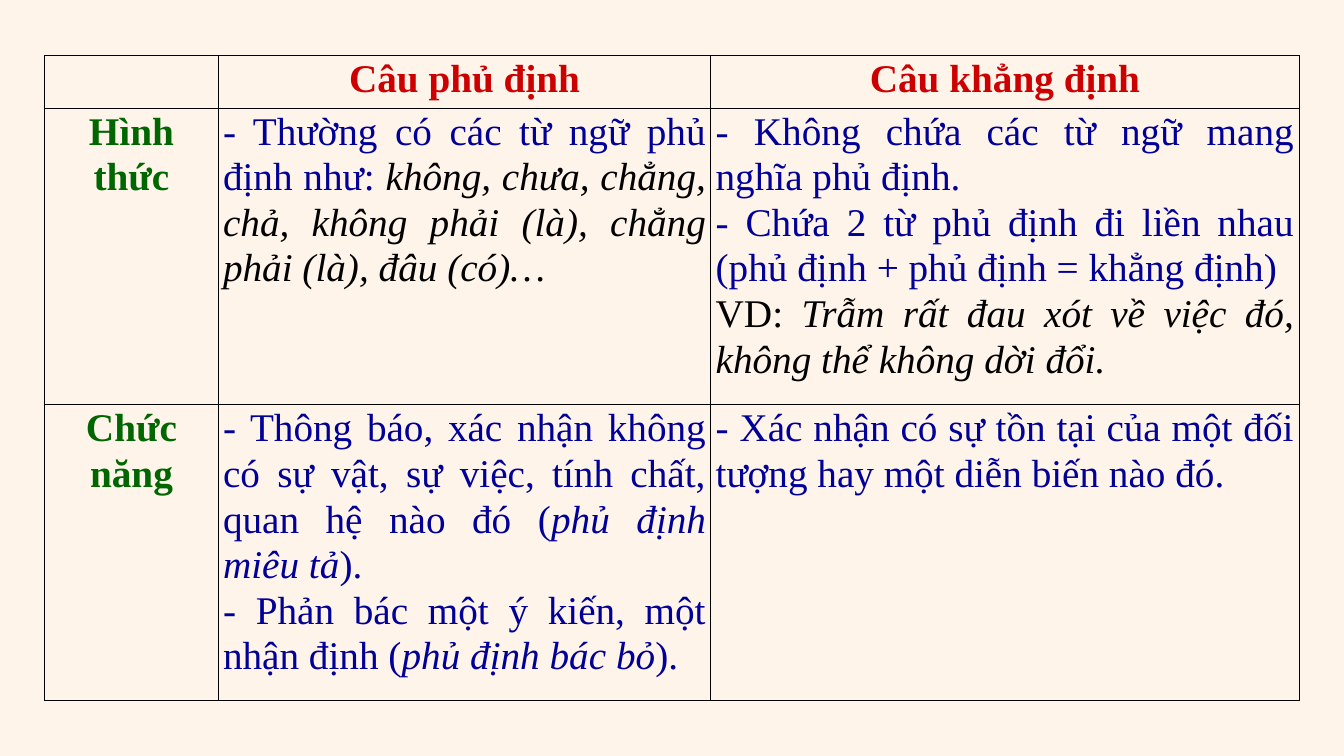
from lxml import etree
from pptx import Presentation
from pptx.dml.color import RGBColor
from pptx.enum.text import MSO_ANCHOR, PP_ALIGN
from pptx.oxml.ns import qn
from pptx.util import Cm, Pt

CENTER = PP_ALIGN.CENTER
JUSTIFY = PP_ALIGN.JUSTIFY
TOP = MSO_ANCHOR.TOP

RED, GREEN, BLUE, BLACK = "CC0000", "006600", "000099", "000000"
BACKGROUND = "FFF4EA"


def color(hex_text):
    return RGBColor.from_string(hex_text)


class TablePage:
    """Holds the text style and the current slide."""

    font_format = {"name": "Times New Roman", "size": Pt(42)}
    cell_format = {
        "margin_left": Cm(0.18),
        "margin_right": Cm(0.18),
        "margin_top": 0,
        "margin_bottom": 0,
        "vertical_anchor": TOP,
    }
    line_spacing = 1.05

    def __init__(self, page):
        self.page = page

    def paint_background(self, hex_text):
        fill = self.page.background.fill
        fill.solid()
        fill.fore_color.rgb = color(hex_text)

    def add_table(self, left, top, widths, heights):
        frame = self.page.shapes.add_table(
            len(heights), len(widths), Cm(left), Cm(top),
            Cm(sum(widths)), Cm(sum(heights)))
        table = frame.table
        table.first_row = table.horz_banding = False
        for column, width in zip(table.columns, widths):
            column.width = Cm(width)
        for row, height in zip(table.rows, heights):
            row.height = Cm(height)
        for cell in table.iter_cells():
            self.style_cell(cell)
        return table

    def style_cell(self, cell):
        for name, value in self.cell_format.items():
            setattr(cell, name, value)
        properties = cell._tc.get_or_add_tcPr()
        for side in ("a:lnL", "a:lnR", "a:lnT", "a:lnB"):
            border = etree.SubElement(properties, qn(side), w=str(Pt(1)))
            fill = etree.SubElement(border, qn("a:solidFill"))
            etree.SubElement(fill, qn("a:srgbClr"), val=BLACK)
        cell.fill.background()

    def write_cell(self, cell, paragraphs, align, bold=False):
        """Each paragraph is a list of (text, colour, italic) spans."""
        text_frame = cell.text_frame
        for index, spans in enumerate(paragraphs):
            para = text_frame.add_paragraph() if index else text_frame.paragraphs[0]
            para.alignment = align
            para.line_spacing = self.line_spacing
            for text, hex_text, italic in spans:
                span = para.add_run()
                span.text = text
                span_format = {**self.font_format, "bold": bold, "italic": italic}
                for name, value in span_format.items():
                    setattr(span.font, name, value)
                span.font.color.rgb = color(hex_text)


# Headings: (row, column, text, colour)
HEADINGS = [
    (0, 1, "Câu phủ định", RED),
    (0, 2, "Câu khẳng định", RED),
    (1, 0, "Hình thức", GREEN),
    (2, 0, "Chức năng", GREEN),
]

# Body text by (row, column)
BODY = {
    (1, 1): [
        [("- Thường có các từ ngữ phủ định như: ", BLUE, False),
         ("không, chưa, chẳng, chả, không phải (là), chẳng phải (là), "
          "đâu (có)…", BLACK, True)],
    ],
    (1, 2): [
        [("- Không chứa các từ ngữ mang nghĩa phủ định.", BLUE, False)],
        [("- Chứa 2 từ phủ định đi liền nhau "
          "(phủ định + phủ định = khẳng định)", BLUE, False)],
        [("VD: ", BLACK, False),
         ("Trẫm rất đau xót về việc đó, không thể không dời đổi.", BLACK, True)],
    ],
    (2, 1): [
        [("- Thông báo, xác nhận không có sự vật, sự việc, tính chất, "
          "quan hệ nào đó (", BLUE, False),
         ("phủ định miêu tả", BLUE, True),
         (").", BLUE, False)],
        [("- Phản bác một ý kiến, một nhận định (", BLUE, False),
         ("phủ định bác bỏ", BLUE, True),
         (").", BLUE, False)],
    ],
    (2, 2): [
        [("- Xác nhận có sự tồn tại của một đối tượng hay một diễn biến "
          "nào đó.", BLUE, False)],
    ],
}


def main():
    deck = Presentation()
    deck.slide_width, deck.slide_height = Cm(50.8), Cm(28.58)
    builder = TablePage(deck.slides.add_slide(deck.slide_layouts[6]))
    builder.paint_background(BACKGROUND)

    # Comparison table
    table = builder.add_table(
        1.69, 2.1, widths=[6.56, 18.62, 22.23], heights=[1.98, 11.22, 11.18])
    for row, column, text, hex_text in HEADINGS:
        builder.write_cell(table.cell(row, column), [[(text, hex_text, False)]],
                           CENTER, bold=True)
    for (row, column), paragraphs in BODY.items():
        builder.write_cell(table.cell(row, column), paragraphs, JUSTIFY)

    deck.save("out.pptx")


if __name__ == "__main__":
    main()
